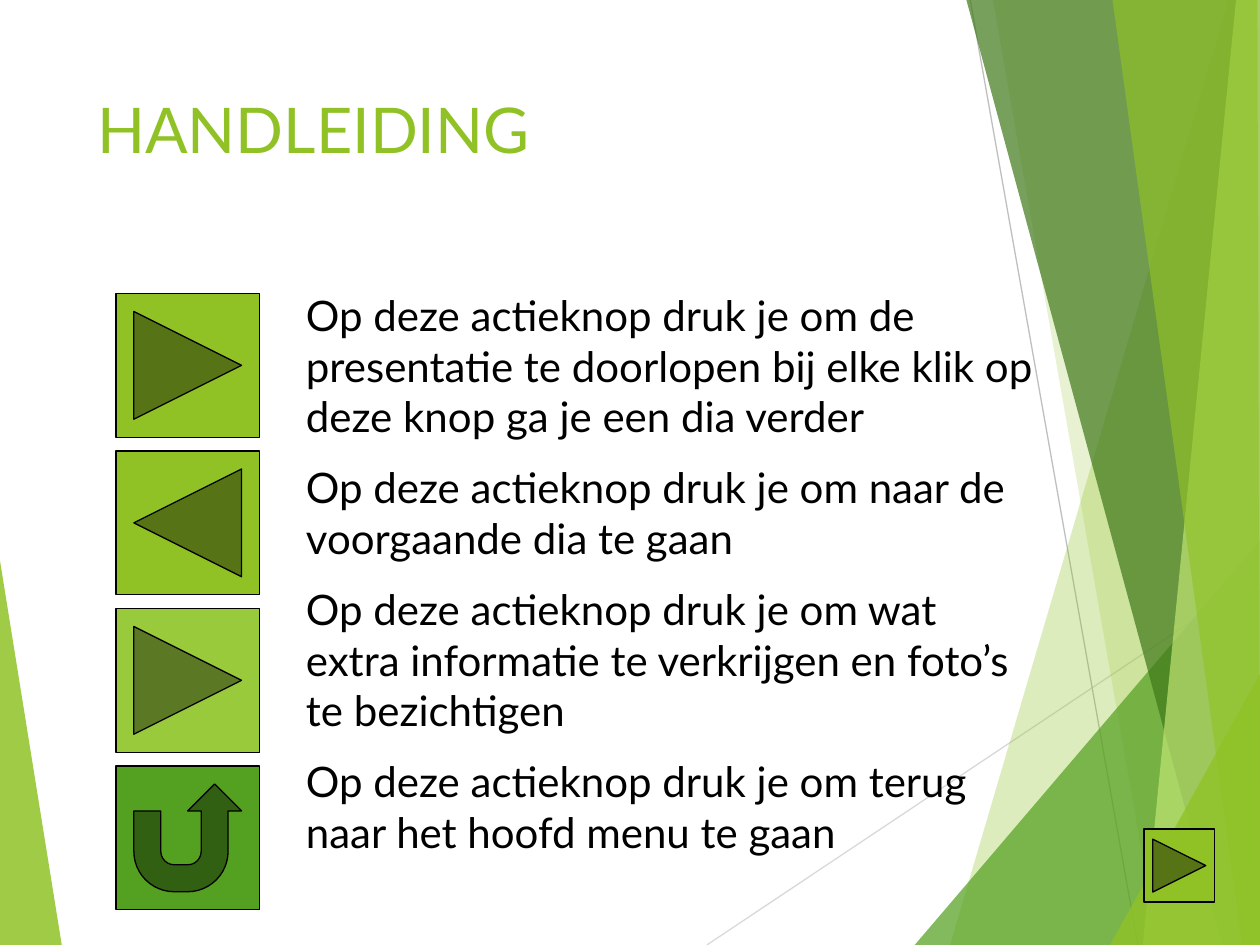
from lxml import etree
from pptx import Presentation
from pptx import util as u
from pptx.dml import color
from pptx.enum import shapes, text
from pptx.oxml import ns

GREEN, LEAF, LIME = "90C226", "54A021", "99CA3C"
FONT = "Lato"
BUTTON = shapes.MSO_SHAPE
FACETS = [
    (GREEN, 85, [(0, 4.45), (0.49, 7.5), (0, 7.5)]),
    (GREEN, 30, [(9.75, 0), (7.54, 7.5), (10, 7.5), (10, 0)]),
    (GREEN, 20, [(7.88, 0), (9.19, 7.5), (10, 7.5), (10, 0)]),
    (LEAF, 72, [(7.26, 7.5), (10, 4.29), (10, 7.5)]),
    ("3F7819", 70, [(7.67, 0), (9.7, 7.5), (10, 7.5), (10, 0)]),
    ("C0E474", 70, [(9.81, 0), (9.07, 7.5), (10, 7.5), (10, 0)]),
    (GREEN, 65, [(8.83, 0), (9.86, 7.5), (10, 7.5), (9.98, 0)]),
    (GREEN, 80, [(8.81, 7.5), (10, 5.35), (10, 7.5)]),
]
RAYS = [("D9D9D9", (5.61, 7.5), (10, 4.57)), ("BFBFBF", (7.7, 0), (9.03, 7.5))]
BUTTONS = [
    (BUTTON.ACTION_BUTTON_FORWARD_OR_NEXT, GREEN),
    (BUTTON.ACTION_BUTTON_BACK_OR_PREVIOUS, GREEN),
    (BUTTON.ACTION_BUTTON_FORWARD_OR_NEXT, LIME),
    (BUTTON.ACTION_BUTTON_RETURN, LEAF),
]
INSTRUCTIONS = [
    "Op deze actieknop druk je om de presentatie te doorlopen bij elke klik op deze knop ga je een dia verder",
    "Op deze actieknop druk je om naar de voorgaande dia te gaan",
    "Op deze actieknop druk je om wat extra informatie te verkrijgen en foto’s te bezichtigen",
    "Op deze actieknop druk je om terug naar het hoofd menu te gaan",
]


def apply(target, values):
    for name, value in values.items():
        setattr(target, name, value)


def rgb(code):
    return color.RGBColor.from_string(code)


def inches(values):
    return [u.Inches(value) for value in values]


def paint(shape, code):
    shape.shadow.inherit = False
    shape.fill.solid()
    shape.fill.fore_color.rgb = rgb(code)


def add_backdrop(page, box):
    left, top = box
    for code, start, end in RAYS:
        ray = page.shapes.add_connector(
            shapes.MSO_CONNECTOR.STRAIGHT,
            *inches((left + start[0], top + start[1], left + end[0], top + end[1])))
        ray.line.color.rgb = rgb(code)
        ray.line.width = u.Pt(0.75)
        etree.SubElement(ray._element.spPr, ns.qn("a:effectLst"))
    for code, opacity, corners in FACETS:
        points = [inches((left + x, top + y)) for x, y in corners]
        builder = page.shapes.build_freeform(*points[0])
        builder.add_line_segments(points[1:], close=True)
        facet = builder.convert_to_shape()
        paint(facet, code)
        facet.line.fill.background()
        tint = facet._element.spPr.find(".//" + ns.qn("a:srgbClr"))
        etree.SubElement(tint, ns.qn("a:alpha"), val=str(opacity * 1000))


def write(para, words, size, code):
    span = para.add_run()
    span.text = words
    apply(span.font, {"name": FONT, "size": u.Pt(size)})
    span.font.color.rgb = rgb(code)


def add_title(page, box):
    title = page.shapes.title
    apply(title, dict(zip(("left", "top", "width", "height"), inches(box))))
    apply(title.text_frame, {"vertical_anchor": text.MSO_ANCHOR.TOP, "word_wrap": True})
    para = title.text_frame.paragraphs[0]
    para.alignment = text.PP_ALIGN.LEFT
    write(para, "HANDLEIDING", 36, GREEN)


def add_button(page, kind, code, box):
    button = page.shapes.add_shape(kind, *inches(box))
    paint(button, code)
    button.line.color.rgb = rgb("000000")
    button.line.width = u.Pt(0.75)


def add_button_column(page, box, pitch):
    left, top, width, height = box
    for row, (kind, code) in enumerate(BUTTONS):
        add_button(page, kind, code, (left, top + row * pitch, width, height))


def add_instructions(page, box):
    frame = page.shapes.add_textbox(*inches(box)).text_frame
    frame.word_wrap = True
    for row, words in enumerate(INSTRUCTIONS):
        para = frame.add_paragraph() if row else frame.paragraphs[0]
        para.space_after = u.Pt(12)
        write(para, words, 24, "000000")


def main():
    deck = Presentation()
    apply(deck, {"slide_width": u.Inches(10), "slide_height": u.Inches(7.5)})
    page = deck.slides.add_slide(deck.slide_layouts[5])
    add_backdrop(page, (0, 0))
    add_title(page, (0.67, 0.67, 6.94, 1.44))
    add_button_column(page, (0.92, 2.33, 1.14, 1.14), 1.25)
    add_instructions(page, (2.33, 2.25, 6, 4.69))
    add_button(page, BUTTON.ACTION_BUTTON_FORWARD_OR_NEXT, GREEN, (9.08, 6.58, 0.56, 0.58))
    deck.save("out.pptx")


if __name__ == "__main__":
    main()
